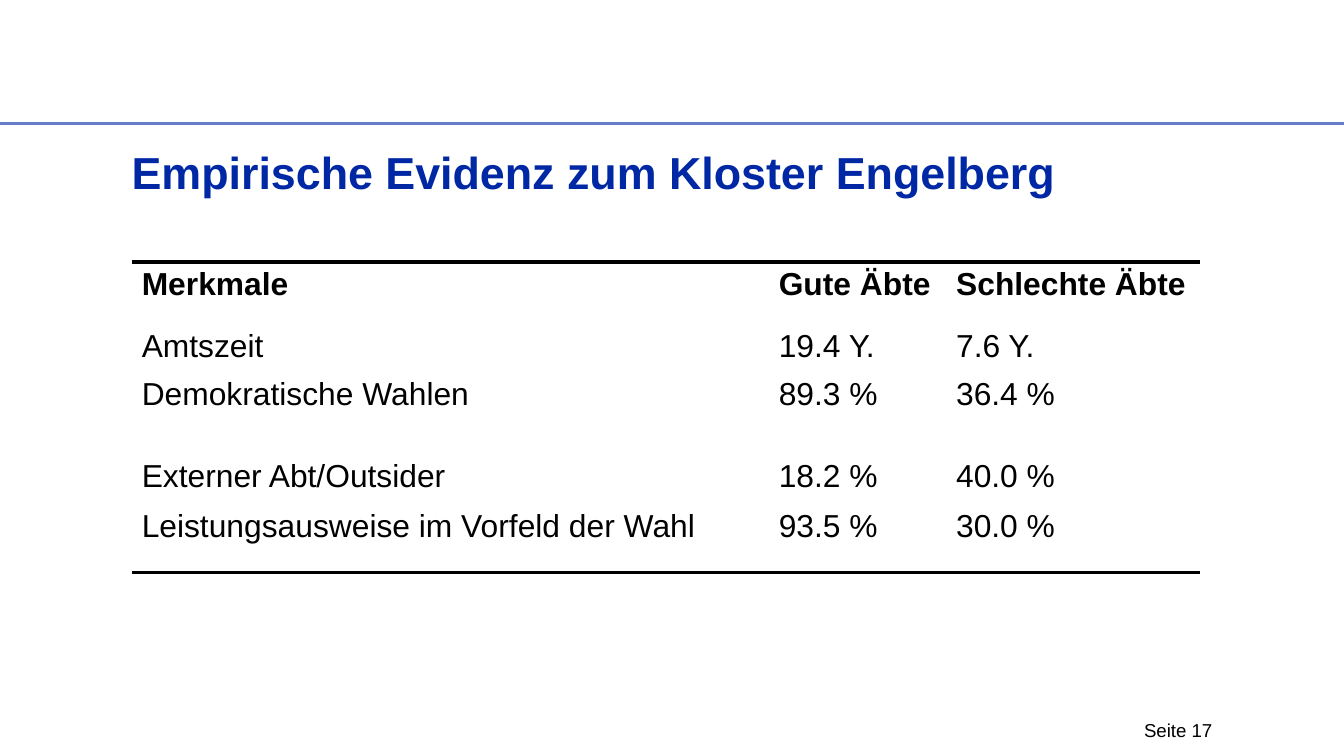
"""Build a slide with a table comparing good and bad abbots of Engelberg."""
from lxml import etree
from pptx import Presentation
from pptx.dml.color import RGBColor
from pptx.enum.shapes import MSO_CONNECTOR
from pptx.enum.text import PP_ALIGN
from pptx.oxml.ns import qn
from pptx.util import Inches, Pt

STRAIGHT = MSO_CONNECTOR.STRAIGHT
LEFT, RIGHT = PP_ALIGN.LEFT, PP_ALIGN.RIGHT
BLACK = RGBColor(0x00, 0x00, 0x00)
WHITE = RGBColor(0xFF, 0xFF, 0xFF)
TITLE_BLUE = RGBColor(0x00, 0x28, 0xA5)
RULE_BLUE = RGBColor(0x66, 0x7E, 0xC9)
PLAIN_TABLE_STYLE = "{2D5ABB26-0587-4C30-8999-92F81FD0307C}"

TITLE = "Empirische Evidenz zum Kloster Engelberg"
PAGE_LABEL = "Seite 17"
ROWS = [
    ("Merkmale", "Gute Äbte", "Schlechte Äbte"),
    ("Amtszeit", "19.4 Y.", "7.6 Y."),
    ("Demokratische Wahlen", "89.3 %", "36.4 %"),
    ("Externer Abt/Outsider", "18.2 %", "40.0 %"),
    ("Leistungsausweise im Vorfeld der Wahl", "93.5 %", "30.0 %"),
]
COLUMN_WIDTHS = [4.74, 1.32, 1.89]
ROW_HEIGHTS = [0.46, 0.33, 0.61, 0.37, 0.51]
MARGIN = 0.98
CELL_MARGIN = Inches(0.15) // 2


def write_text(frame, text, size, color=BLACK, bold=False, align=LEFT):
    paragraph = frame.paragraphs[0]
    paragraph.alignment = align
    run = paragraph.add_run()
    run.text = text
    run.font.name = "Arial"
    run.font.size = Pt(size)
    run.font.bold = bold
    run.font.color.rgb = color
    etree.SubElement(paragraph._p, qn("a:endParaRPr"), sz=str(size * 100))


def add_text(slide, text, left, top, width, height, **text_format):
    frame = slide.shapes.add_textbox(
        Inches(left), Inches(top), Inches(width), Inches(height)).text_frame
    frame.word_wrap = True
    frame.margin_left = frame.margin_right = 0
    frame.margin_top = frame.margin_bottom = 0
    write_text(frame, text, **text_format)


def add_border(cell, side, width=2):
    properties = cell._tc.get_or_add_tcPr()
    line = etree.SubElement(properties, qn(f"a:{side}"), w=str(Pt(width)))
    fill = etree.SubElement(line, qn("a:solidFill"))
    etree.SubElement(fill, qn("a:srgbClr"), val=str(BLACK))


def add_header_rule(slide):
    rule = slide.shapes.add_connector(
        STRAIGHT, 0, Inches(0.92), Inches(10), Inches(0.92))
    rule.line.color.rgb = RULE_BLUE
    rule.line.width = Pt(1.25)
    etree.SubElement(rule._element.spPr, qn("a:effectLst"))


def add_comparison_table(slide):
    table = slide.shapes.add_table(
        len(ROWS), len(COLUMN_WIDTHS), Inches(MARGIN), Inches(1.95),
        Inches(sum(COLUMN_WIDTHS)), Inches(sum(ROW_HEIGHTS))).table
    table.first_row = table.horz_banding = False
    table._tbl.tblPr.find(qn("a:tableStyleId")).text = PLAIN_TABLE_STYLE
    for column, width in zip(table.columns, COLUMN_WIDTHS):
        column.width = Inches(width)
    for row, height in zip(table.rows, ROW_HEIGHTS):
        row.height = Inches(height)
    for row_index, texts in enumerate(ROWS):
        for column_index, text in enumerate(texts):
            cell = table.cell(row_index, column_index)
            cell.margin_left = cell.margin_right = CELL_MARGIN
            cell.margin_top = cell.margin_bottom = CELL_MARGIN // 2
            if row_index == 0:
                add_border(cell, "lnT")
            if row_index == len(ROWS) - 1:
                add_border(cell, "lnB")
            cell.fill.solid()
            cell.fill.fore_color.rgb = WHITE
            write_text(cell.text_frame, text, 17, bold=row_index == 0)


def main():
    presentation = Presentation()
    presentation.slide_width = Inches(10)
    presentation.slide_height = Inches(10) * 9 // 16
    slide = presentation.slides.add_slide(presentation.slide_layouts[6])
    add_header_rule(slide)
    add_text(slide, TITLE, MARGIN, 1.08, 8.03, 0.38,
             size=24, color=TITLE_BLUE, bold=True)
    add_text(slide, PAGE_LABEL, 8.15, 5.35, 0.87, 0.18, size=10, align=RIGHT)
    add_comparison_table(slide)
    presentation.save("out.pptx")


if __name__ == "__main__":
    main()
